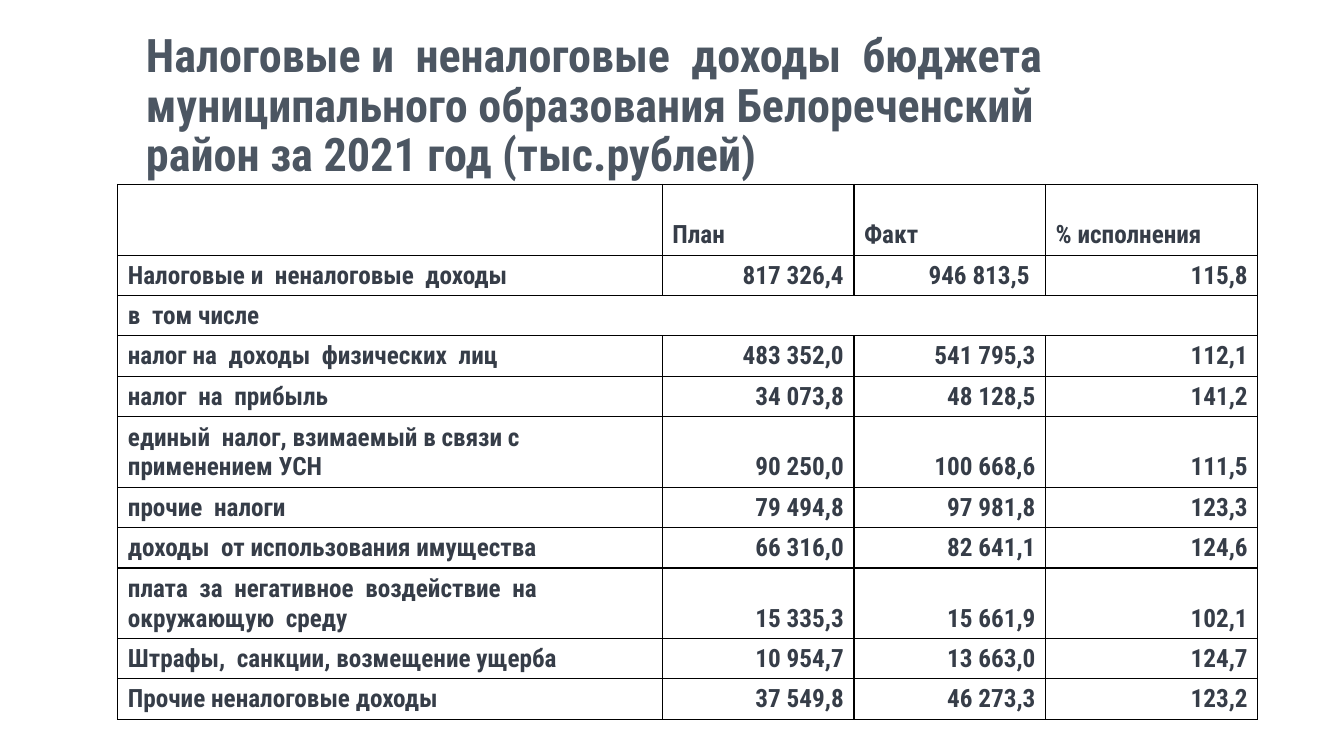
"""Build a slide with a table of planned and actual budget revenues."""
from lxml.etree import SubElement
from pptx import Presentation
from pptx.dml.color import RGBColor as Rgb
from pptx.enum.text import MSO_ANCHOR as Anchor, PP_ALIGN as Align
from pptx.oxml.ns import qn
from pptx.util import Cm, Pt

TITLE = ("Налоговые и  неналоговые  доходы  бюджета муниципального образования "
         "Белореченский  район за 2021 год (тыс.рублей)")
HEADER = ("", "План", "Факт", "% исполнения")
SUBHEAD = ("в  том числе",)
REVENUES = [
    HEADER,
    ("Налоговые и  неналоговые  доходы", "817 326,4", "946 813,5 ", "115,8"),
    SUBHEAD,
    ("налог на  доходы  физических  лиц", "483 352,0", "541 795,3", "112,1"),
    ("налог  на  прибыль", "34 073,8", "48 128,5", "141,2"),
    ("единый  налог, взимаемый в связи с применением УСН", "90 250,0", "100 668,6", "111,5"),
    ("прочие  налоги", "79 494,8", "97 981,8", "123,3"),
    ("доходы  от использования имущества", "66 316,0", "82 641,1", "124,6"),
    ("плата  за  негативное  воздействие  на окружающую  среду", "15 335,3", "15 661,9", "102,1"),
    ("Штрафы,  санкции, возмещение ущерба", "10 954,7", "13 663,0", "124,7"),
    ("Прочие неналоговые доходы", "37 549,8", "46 273,3", "123,2"),
]
THEME = {
    "title": {"name": "Roboto Condensed", "size": Pt(33), "bold": True, "color": "4C5662"},
    "body": {"name": "Roboto Condensed", "size": Pt(18), "bold": True, "color": "363D48"},
    "border": "000000",
}
COLUMN_WIDTHS = (13.72, 4.83, 4.83, 5.35)
HEADER_HEIGHT, LINE_HEIGHT, WRAPPED_HEIGHT = 1.78, 1, 1.75
WRAP_LENGTH = 40


def style(font, look):
    """Apply a theme text look to a font."""
    for key, value in look.items():
        if key == "color":
            font.color.rgb = Rgb.from_string(value)
        else:
            setattr(font, key, value)


def draw_borders(cell):
    """Draw a thin line along every side of a cell."""
    for side in ("lnL", "lnR", "lnT", "lnB"):
        line = SubElement(cell._tc.get_or_add_tcPr(), qn(f"a:{side}"), w=str(Pt(1)))
        SubElement(SubElement(line, qn("a:solidFill")), qn("a:srgbClr"), val=THEME["border"])


def row_height(entry):
    """Choose the height that the label of a row needs."""
    if entry is HEADER:
        return Cm(HEADER_HEIGHT)
    return Cm(WRAPPED_HEIGHT if len(entry[0]) > WRAP_LENGTH else LINE_HEIGHT)


def add_title(slide):
    """Add the slide heading."""
    frame = slide.shapes.add_textbox(Cm(3.43), Cm(0.53), Cm(24.94), Cm(4.34)).text_frame
    frame.word_wrap = True
    frame.vertical_anchor = Anchor.MIDDLE
    heading = frame.paragraphs[0]
    heading.text = TITLE
    heading.line_spacing = 0.9
    style(heading.font, THEME["title"])


def add_revenues(slide):
    """Add the revenue table."""
    heights = [row_height(entry) for entry in REVENUES]
    table = slide.shapes.add_table(
        len(REVENUES), len(HEADER), Cm(2.97), Cm(4.65),
        Cm(sum(COLUMN_WIDTHS)), sum(heights)).table
    table.first_row = table.horz_banding = False
    for column, width in zip(table.columns, COLUMN_WIDTHS):
        column.width = Cm(width)
    for r, (entry, height) in enumerate(zip(REVENUES, heights)):
        table.rows[r].height = height
        if entry is SUBHEAD:
            table.cell(r, 0).merge(table.cell(r, len(HEADER) - 1))
        for c, value in enumerate(entry):
            cell = table.cell(r, c)
            draw_borders(cell)
            cell.fill.background()
            cell.vertical_anchor = Anchor.BOTTOM
            paragraph = cell.text_frame.paragraphs[0]
            paragraph.text = value
            paragraph.alignment = Align.RIGHT if c and entry is not HEADER else Align.LEFT
            style(paragraph.font, THEME["body"])


def main():
    """Create and save the presentation."""
    deck = Presentation()
    deck.slide_width, deck.slide_height = Cm(33.87), Cm(19.05)
    slide = deck.slides.add_slide(deck.slide_layouts[6])
    add_title(slide)
    add_revenues(slide)
    deck.save("out.pptx")


if __name__ == "__main__":
    main()
